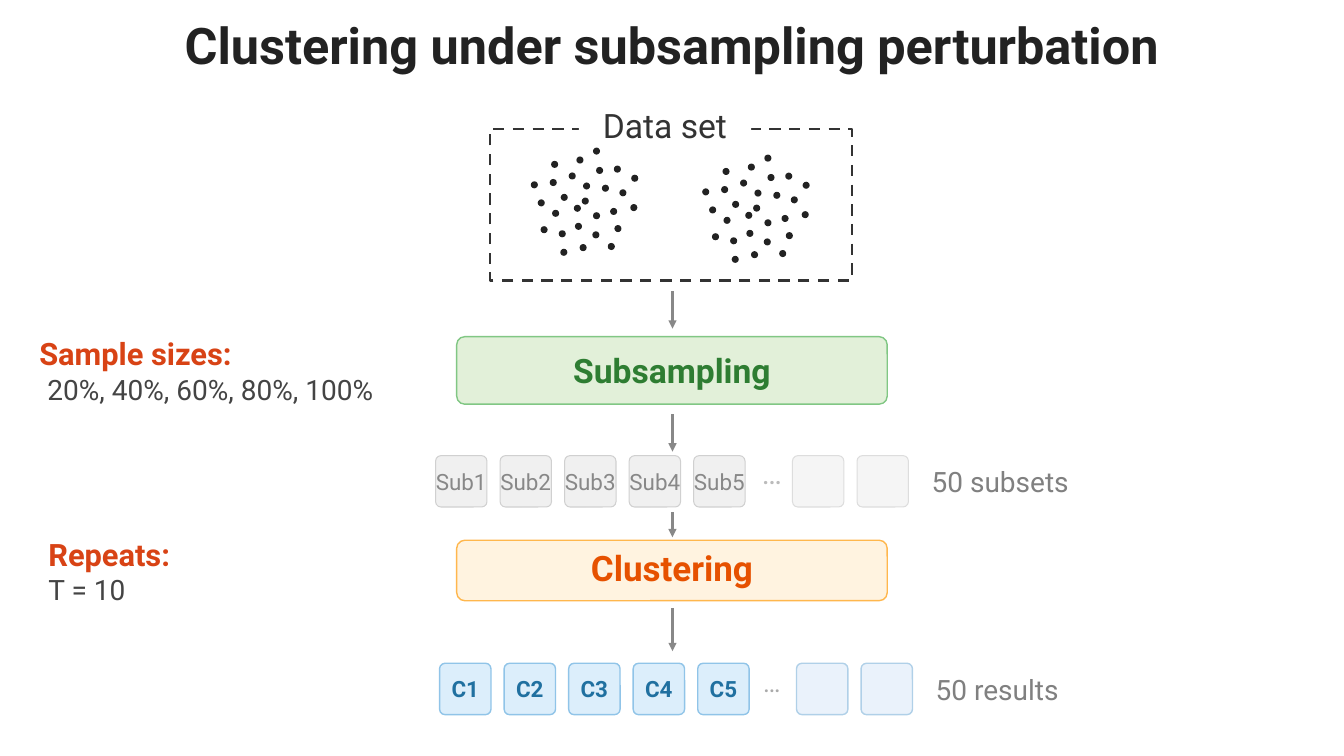
from math import cos, pi, sin, sqrt

from lxml.etree import SubElement
from pptx import Presentation
from pptx.dml.color import RGBColor
from pptx.enum.dml import MSO_LINE_DASH_STYLE as Dash
from pptx.enum.shapes import MSO_CONNECTOR as Connector, MSO_SHAPE as Shape
from pptx.enum.text import MSO_ANCHOR as Anchor, PP_ALIGN as Align
from pptx.oxml.ns import qn
from pptx.util import Inches, Pt

FONT = "Roboto"
CENTER = 6.67
TILE, STEP, RADIUS = 0.51, 0.64, 0.054
DOT, DOT_COUNT, DOT_SPREAD = 0.07, 28, 0.106
GOLDEN_ANGLE = pi * (3 - sqrt(5))


def color(hex_code):
    """Turn a hex string into a colour."""
    return RGBColor.from_string(hex_code)


def set_font(para, size, hex_code, bold=False):
    """Set the font of a whole paragraph."""
    font = para.font
    font.name, font.size, font.bold = FONT, Pt(size), bold
    font.color.rgb = color(hex_code)


def prepare_frame(box, wrap):
    """Give a box no insets and middle anchoring."""
    frame = box.text_frame
    frame.margin_left = frame.margin_right = 0
    frame.margin_top = frame.margin_bottom = 0
    frame.vertical_anchor = Anchor.MIDDLE
    frame.word_wrap = wrap
    return frame


def write_label(box, text, size, hex_code, bold=False, align=Align.CENTER, wrap=False):
    """Write a single line of text into a box."""
    para = prepare_frame(box, wrap).paragraphs[0]
    para.text, para.alignment = text, align
    set_font(para, size, hex_code, bold)


def add_text(page, place, text, size, hex_code, **style):
    """Add a text box with one line."""
    box = page.shapes.add_textbox(*map(Inches, place))
    write_label(box, text, size, hex_code, wrap=True, **style)


def add_note(page, place, heading, value, indent=0):
    """Add a red heading with its value on the next line."""
    frame = prepare_frame(page.shapes.add_textbox(*map(Inches, place)), True)
    first, second = frame.paragraphs[0], frame.add_paragraph()
    first.text, second.text = heading, value
    second._p.get_or_add_pPr().set("marL", str(Inches(indent)))
    set_font(first, 22, "D84315", True)
    set_font(second, 20, "444444")


def add_box(page, kind, place, fill, line=None, width=1.0, radius=None):
    """Add a filled shape with an optional outline."""
    box = page.shapes.add_shape(kind, *map(Inches, place))
    box.shadow.inherit = False
    box.fill.solid()
    box.fill.fore_color.rgb = color(fill)
    if line:
        box.line.color.rgb = color(line)
        box.line.width = Pt(width)
    else:
        box.line.fill.background()
    if radius is not None:
        box.adjustments[0] = radius / min(place[2:])
    return box


def add_arrow(page, top, bottom):
    """Add a downward arrow on the centre line."""
    x = Inches(CENTER)
    arrow = page.shapes.add_connector(Connector.STRAIGHT, x, Inches(top), x, Inches(bottom))
    arrow.line.color.rgb = color("888888")
    arrow.line.width = Pt(1.5)
    SubElement(arrow.line._get_or_add_ln(), qn("a:tailEnd"), type="triangle")
    SubElement(arrow._element.spPr, qn("a:effectLst"))


def add_cluster(page, left, top):
    """Add a sunflower spiral of dots around its first dot."""
    for number in range(DOT_COUNT):
        reach, angle = DOT_SPREAD * sqrt(number), number * GOLDEN_ANGLE
        place = (left + reach * cos(angle), top + reach * sin(angle), DOT, DOT)
        add_box(page, Shape.OVAL, place, "222222")


def add_tile_row(page, left, top, prefix, caption, full, empty, width, ink, bold, dots):
    """Add five named tiles, an ellipsis, two empty tiles and a caption."""
    for number in range(5):
        place = (left + number * STEP, top, TILE, TILE)
        tile = add_box(page, Shape.ROUNDED_RECTANGLE, place, *full, width, RADIUS)
        write_label(tile, f"{prefix}{number + 1}", 16, ink, bold)
    dots_top, dots_size, dots_ink = dots
    add_text(page, (7.49, dots_top, 0.33, TILE), "…", dots_size, dots_ink)
    for number in range(2):
        place = (left + 3.54 + number * STEP, top, TILE, TILE)
        add_box(page, Shape.ROUNDED_RECTANGLE, place, *empty, width, RADIUS)
    add_text(page, (left + 4.92, top, 1.47, TILE), caption, 20, "808080", align=Align.LEFT)


def add_stage(page, top, height, text, size, ink, fill, line, lift=0):
    """Add a wide rounded box that names a processing stage."""
    place = (4.53, top, 4.27, height)
    box = add_box(page, Shape.ROUNDED_RECTANGLE, place, fill, line, radius=0.08)
    write_label(box, text, size, ink, True)
    box.text_frame.margin_bottom = Inches(2 * lift)


def add_data_set(page):
    """Add the dashed frame with its title and two point clouds."""
    frame = add_box(page, Shape.RECTANGLE, (4.86, 1.28, 3.59, 1.5), "FFFFFF", "333333", 2)
    frame.line.dash_style = Dash.DASH
    title = add_box(page, Shape.RECTANGLE, (5.74, 1.02, 1.71, 0.45), "FFFFFF")
    write_label(title, "Data set", 24, "333333")
    add_cluster(page, 5.77, 1.96)
    add_cluster(page, 7.47, 2.03)


def main():
    """Build the slide and save it."""
    deck = Presentation()
    deck.slide_width, deck.slide_height = Inches(13.33), Inches(7.5)
    page = deck.slides.add_slide(deck.slide_layouts[6])
    add_text(page, (0, 0.11, 13.33, 0.67), "Clustering under subsampling perturbation",
             36, "222222", bold=True)
    add_data_set(page)
    for top, bottom in ((2.89, 3.26), (4.11, 4.48), (5.08, 5.33), (6.03, 6.46)):
        add_arrow(page, top, bottom)
    add_stage(page, 3.34, 0.67, "Subsampling", 24, "2E7D32", "E2F0D9", "81C784")
    add_stage(page, 5.36, 0.6, "Clustering", 25, "E65100", "FFF3E0", "FFB74D", lift=0.03)
    add_tile_row(page, 4.32, 4.52, "Sub", "50 subsets", ("F0F0F0", "D0D0D0"),
                 ("F5F5F5", "DDDDDD"), 0.75, "888888", False, (4.43, 21.4, "BBBBBB"))
    add_tile_row(page, 4.36, 6.58, "C", "50 results", ("DCEEFB", "90C4E8"),
                 ("EAF2FB", "B0D0E8"), 1, "2070A0", True, (6.51, 18.6, "AAAAAA"))
    add_note(page, (0.39, 3.34, 3.95, 0.67), "Sample sizes:", "20%, 40%, 60%, 80%, 100%", 0.08)
    add_note(page, (0.48, 5.33, 2.31, 0.67), "Repeats:", "T = 10")
    deck.save("out.pptx")


if __name__ == "__main__":
    main()
